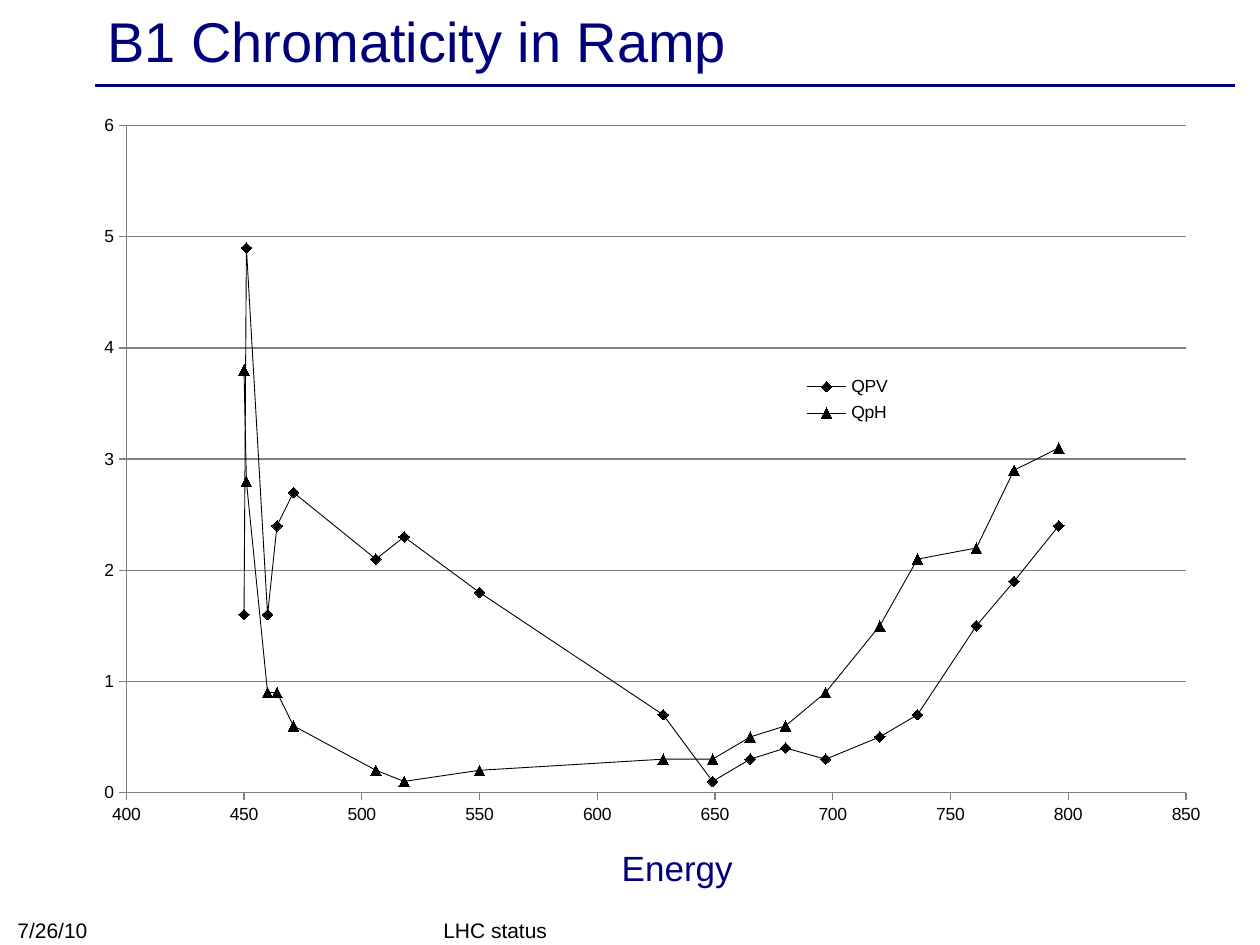
import pptx
import pptx.util
import pptx.chart.data
import pptx.dml.color
import pptx.enum.chart
import pptx.enum.shapes
import pptx.enum.text
import pptx.oxml
from lxml import etree

Inches = pptx.util.Inches
Pt = pptx.util.Pt
RGB = pptx.dml.color.RGBColor
Anchor = pptx.enum.text.MSO_ANCHOR
Align = pptx.enum.text.PP_ALIGN
Mark = pptx.enum.chart.XL_MARKER_STYLE
Tick = pptx.enum.chart.XL_TICK_MARK

NAVY = RGB(0x00, 0x00, 0x7D)
BLACK = RGB(0x00, 0x00, 0x00)
GRAY = RGB(0x80, 0x80, 0x80)

ENERGY = [450, 451, 460, 464, 471, 506, 518, 550, 628,
          649, 665, 680, 697, 720, 736, 761, 777, 796]
CURVES = {
    "QPV": ([1.6, 4.9, 1.6, 2.4, 2.7, 2.1, 2.3, 1.8, 0.7,
             0.1, 0.3, 0.4, 0.3, 0.5, 0.7, 1.5, 1.9, 2.4], Mark.DIAMOND),
    "QpH": ([3.8, 2.8, 0.9, 0.9, 0.6, 0.2, 0.1, 0.2, 0.3,
             0.3, 0.5, 0.6, 0.9, 1.5, 2.1, 2.2, 2.9, 3.1], Mark.TRIANGLE),
}


class Deck:
    face = "Arial"

    def __init__(self):
        self.show = pptx.Presentation()
        self.show.slide_width = Inches(10)
        self.show.slide_height = Inches(7.5)
        self.slide = self.show.slides.add_slide(self.show.slide_layouts[5])

    def place(self, shape, box):
        shape.left, shape.top, shape.width, shape.height = map(Inches, box)

    def fill(self, shape, text, size, color, anchor, align):
        frame = shape.text_frame
        frame.text = text
        frame.vertical_anchor = anchor
        para = frame.paragraphs[0]
        para.alignment = align
        self.style(para.font, size, color)

    def style(self, font, size, color):
        font.name = self.face
        font.size = Pt(size)
        font.color.rgb = color

    def title(self, text, box):
        shape = self.slide.shapes.title
        self.place(shape, box)
        self.fill(shape, text, 32, NAVY, Anchor.MIDDLE, Align.LEFT)

    def label(self, text, box, size=12, color=BLACK, anchor=Anchor.BOTTOM,
              align=Align.LEFT, wrap=True):
        shape = self.slide.shapes.add_textbox(*map(Inches, box))
        shape.text_frame.word_wrap = wrap
        self.fill(shape, text, size, color, anchor, align)

    def rule(self, left, right, top):
        line = self.slide.shapes.add_connector(
            pptx.enum.shapes.MSO_CONNECTOR.STRAIGHT,
            Inches(left), Inches(top), Inches(right), Inches(top))
        line.line.color.rgb = NAVY
        line.line.width = Pt(2)
        etree.SubElement(line._element.spPr, pptx.oxml.ns.qn("a:effectLst"))

    def axis(self, axis, low, high, step, grid):
        axis.minimum_scale, axis.maximum_scale = low, high
        axis.major_unit = step
        axis.has_major_gridlines = grid
        axis.major_tick_mark = Tick.OUTSIDE
        axis.minor_tick_mark = Tick.NONE
        lines = [axis.format.line]
        if grid:
            lines.append(axis.major_gridlines.format.line)
        for line in lines:
            line.color.rgb = GRAY
            line.width = Pt(0.75)

    def layout(self, part, box, inner=False):
        qn = pptx.oxml.ns.qn
        for old in part.findall(qn("c:layout")):
            part.remove(old)
        node = etree.Element(qn("c:layout"))
        manual = etree.SubElement(node, qn("c:manualLayout"))
        pairs = [("layoutTarget", "inner")] if inner else []
        pairs += [("xMode", "edge"), ("yMode", "edge")]
        pairs += zip("xywh", map(str, box))
        for tag, val in pairs:
            etree.SubElement(manual, qn("c:" + tag)).set("val", val)
        pos = part.find(qn("c:legendPos"))
        part.insert(0 if pos is None else 1, node)

    def scatter(self, box):
        data = pptx.chart.data.XyChartData()
        for name, (vals, mark) in CURVES.items():
            curve = data.add_series(name)
            for x, y in zip(ENERGY, vals):
                curve.add_data_point(x, y)
        kind = pptx.enum.chart.XL_CHART_TYPE.XY_SCATTER_LINES
        chart = self.slide.shapes.add_chart(
            kind, *map(Inches, box), data).chart
        self.style(chart.font, 10, BLACK)
        chart.has_title = False
        chart.has_legend = True
        chart.legend.position = pptx.enum.chart.XL_LEGEND_POSITION.RIGHT
        chart.legend.include_in_layout = False
        self.layout(chart.legend._element, (0.62, 0.34, 0.09, 0.08))
        plot = chart.plots[0]
        plot.vary_by_categories = False
        self.layout(chart._chartSpace.chart.plotArea,
                    (0.08, 0.01, 0.86, 0.9), True)
        self.axis(chart.category_axis, 400, 850, 50, False)
        self.axis(chart.value_axis, 0, 6, 1, True)
        for curve, (vals, mark) in zip(plot.series, CURVES.values()):
            curve.smooth = False
            curve.format.line.color.rgb = BLACK
            curve.format.line.width = Pt(0.5)
            curve.marker.style = mark
            curve.marker.size = 6
            curve.marker.format.fill.solid()
            curve.marker.format.fill.fore_color.rgb = BLACK
            curve.marker.format.line.color.rgb = BLACK


def main():
    deck = Deck()
    deck.rule(0.75, 9.8, 0.68)
    deck.title("B1 Chromaticity in Ramp", (0.75, 0.03, 9, 0.57))
    deck.label("LHC status", (3.42, 7.25, 3.17, 0.28))
    deck.label("7/26/10", (0.04, 7.24, 2.33, 0.29))
    deck.scatter((0.22, 0.92, 9.78, 5.9))
    deck.label("Energy", (4.83, 6.67, 1.09, 0.44), 20, NAVY,
               Anchor.TOP, Align.CENTER, False)
    deck.show.save("out.pptx")


if __name__ == "__main__":
    main()
